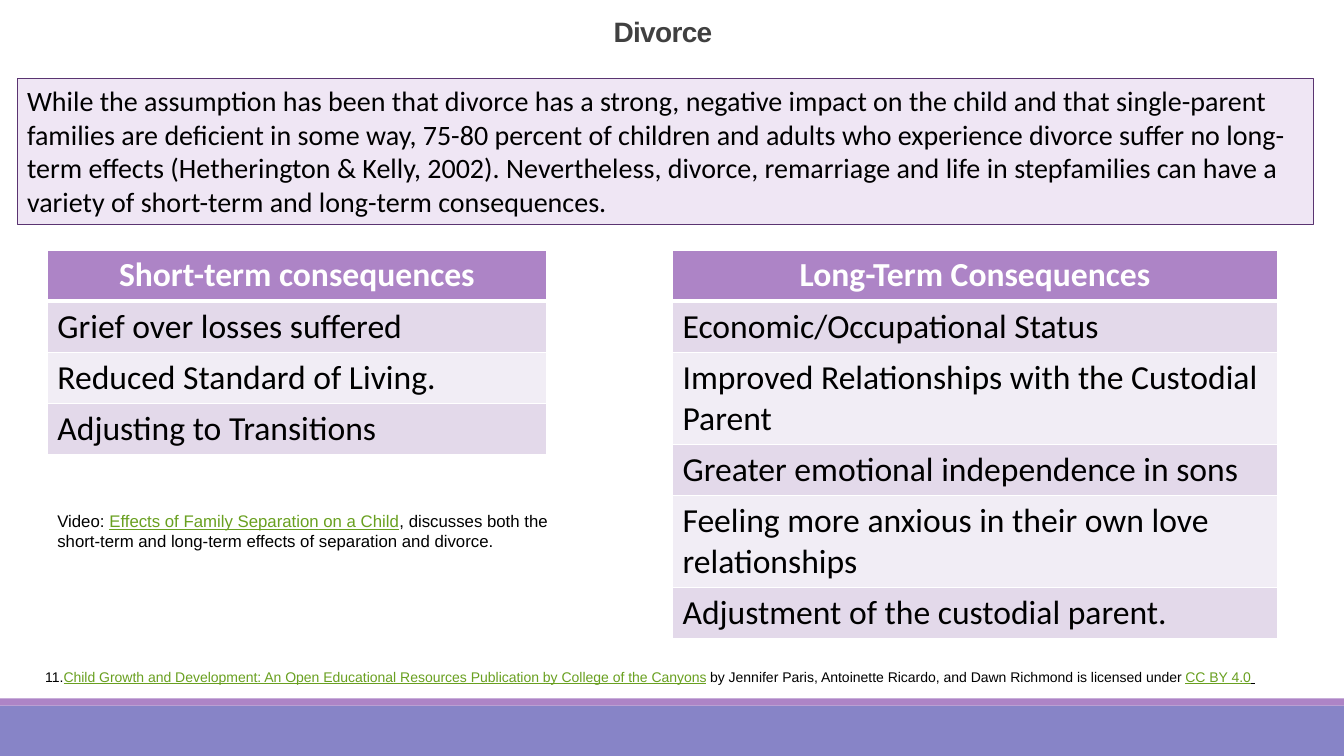
import dataclasses

import lxml.etree
import pptx
import pptx.dml.color
import pptx.enum.shapes
import pptx.enum.text
import pptx.oxml.ns
import pptx.util

RGB = pptx.dml.color.RGBColor
ALIGN = pptx.enum.text.PP_ALIGN
ANCHOR = pptx.enum.text.MSO_ANCHOR
FIT = pptx.enum.text.MSO_AUTO_SIZE
PX = 9144  # 100 px to the inch

BLACK = RGB(0x00, 0x00, 0x00)
WHITE = RGB(0xFF, 0xFF, 0xFF)
GREY = RGB(0x40, 0x40, 0x40)
GREEN = RGB(0x69, 0xA0, 0x20)
BLUE = RGB(0x87, 0x84, 0xC7)
PURPLE = RGB(0xAD, 0x84, 0xC6)
PLUM = RGB(0x5A, 0x34, 0x71)
PALE = RGB(0xEF, 0xE6, 0xF4)
BANDS = (RGB(0xE3, 0xD9, 0xEA), RGB(0xF1, 0xED, 0xF5))

INTRO = (
    "While the assumption has been that divorce has a strong, negative impact on "
    "the child and that single-parent families are deficient in some way, 75-80 "
    "percent of children and adults who experience divorce suffer no long-term "
    "effects (Hetherington & Kelly, 2002). Nevertheless, divorce, remarriage and "
    "life in stepfamilies can have a variety of short-term and long-term consequences."
)


@dataclasses.dataclass(frozen=True)
class Box:
    left: int
    top: int
    width: int
    height: int

    def emu(self) -> tuple[int, ...]:
        return tuple(n * PX for n in dataclasses.astuple(self))


@dataclasses.dataclass(frozen=True)
class Span:
    text: str
    color: RGB = BLACK
    under: bool = False


@dataclasses.dataclass(frozen=True)
class Note:
    box: Box
    size: int
    spans: tuple[Span, ...]


@dataclasses.dataclass(frozen=True)
class Grid:
    box: Box
    rows: tuple[str, ...]
    tall: tuple[int, ...] = ()  # rows whose text takes two lines


NOTES = (
    Note(Box(35, 658, 1250, 27), 10, (
        Span("11."),
        Span("Child Growth and Development: An Open Educational Resources "
             "Publication by College of the Canyons", GREEN, True),
        Span(" by Jennifer Paris, Antoinette Ricardo, and Dawn Richmond "
             "is licensed under "),
        Span("CC BY 4.0", GREEN, True),
        Span(" ", BLACK, True),
    )),
    Note(Box(47, 502, 548, 50), 12, (
        Span("Video: "),
        Span("Effects of Family Separation on a Child", GREEN, True),
        Span(", discusses both the short-term and long-term effects of "
             "separation and divorce."),
    )),
)

GRIDS = (
    Grid(Box(47, 248, 495, 200), (
        "Short-term consequences",
        "Grief over losses suffered",
        "Reduced Standard of Living.",
        "Adjusting to Transitions",
    )),
    Grid(Box(667, 248, 600, 380), (
        "Long-Term Consequences",
        "Economic/Occupational Status",
        "Improved Relationships with the Custodial Parent",
        "Greater emotional independence in sons",
        "Feeling more anxious in their own love relationships",
        "Adjustment of the custodial parent.",
    ), tall=(2, 4)),
)


def style(para, name: str, size: int, color: RGB, bold: bool = False) -> None:
    font = para.font
    font.name, font.size, font.bold = name, pptx.util.Pt(size), bold
    font.color.rgb = color


def add_rect(slide, box: Box, color: RGB):
    rect = slide.shapes.add_shape(
        pptx.enum.shapes.MSO_SHAPE.RECTANGLE, *box.emu())
    rect.shadow.inherit = False
    rect.fill.solid()
    rect.fill.fore_color.rgb = color
    rect.line.fill.background()
    return rect


def set_title(slide) -> None:
    title = slide.shapes.title
    title.left, title.top, title.width, title.height = Box(475, 13, 365, 40).emu()
    frame = title.text_frame
    frame.auto_size = FIT.NONE
    frame.vertical_anchor = ANCHOR.BOTTOM
    para = frame.paragraphs[0]
    para.alignment, para.line_spacing = ALIGN.CENTER, 0.85
    style(para, "Arial", 20, GREY, True)
    run = para.add_run()
    run.text = "Divorce"
    run._r.get_or_add_rPr().set("spc", "-50")


def add_intro(slide) -> None:
    panel = add_rect(slide, Box(17, 78, 1286, 145), PALE)
    panel.line.color.rgb = PLUM
    panel.line.width = pptx.util.Pt(0.75)
    frame = panel.text_frame
    frame.word_wrap = True
    frame.vertical_anchor = ANCHOR.TOP
    para = frame.paragraphs[0]
    para.text = INTRO
    para.alignment = ALIGN.LEFT
    style(para, "Calibri", 20, BLACK)


def add_note(slide, note: Note) -> None:
    frame = slide.shapes.add_textbox(*note.box.emu()).text_frame
    frame.word_wrap = True
    frame.auto_size = FIT.SHAPE_TO_FIT_TEXT
    para = frame.paragraphs[0]
    para.font.name, para.font.size = "Arial", pptx.util.Pt(note.size)
    for span in note.spans:
        run = para.add_run()
        run.text = span.text
        run.font.color.rgb = span.color
        run.font.underline = span.under


def add_edges(cell, top: int, base: int) -> None:
    """Give the cell white borders; top and base are in points."""
    qn = pptx.oxml.ns.qn
    props = cell._tc.get_or_add_tcPr()
    for side, width in (("L", 1), ("R", 1), ("T", top), ("B", base)):
        line = lxml.etree.SubElement(
            props, qn(f"a:ln{side}"), w=str(pptx.util.Pt(width)))
        fill = lxml.etree.SubElement(line, qn("a:solidFill"))
        lxml.etree.SubElement(fill, qn("a:srgbClr"), val=str(WHITE))


def add_grid(slide, grid: Grid) -> None:
    table = slide.shapes.add_table(len(grid.rows), 1, *grid.box.emu()).table
    for i, text in enumerate(grid.rows):
        head = i == 0
        table.rows[i].height = (90 if i in grid.tall else 50) * PX
        cell = table.cell(i, 0)
        add_edges(cell, 3 if i == 1 else 1, 3 if head else 1)
        cell.fill.solid()
        cell.fill.fore_color.rgb = PURPLE if head else BANDS[(i - 1) % 2]
        para = cell.text_frame.paragraphs[0]
        para.text = text
        para.alignment = ALIGN.CENTER if head else ALIGN.LEFT
        style(para, "Calibri", 24, WHITE if head else BLACK, head)


def main() -> None:
    deck = pptx.Presentation()
    deck.slide_width, deck.slide_height = 1333 * PX, 750 * PX
    slide = deck.slides.add_slide(deck.slide_layouts.get_by_name("Title Only"))
    add_rect(slide, Box(0, 700, 1333, 50), BLUE)
    add_rect(slide, Box(0, 693, 1333, 7), PURPLE)
    set_title(slide)
    add_intro(slide)
    for grid in GRIDS:
        add_grid(slide, grid)
    for note in NOTES:
        add_note(slide, note)
    deck.save("out.pptx")


if __name__ == "__main__":
    main()
